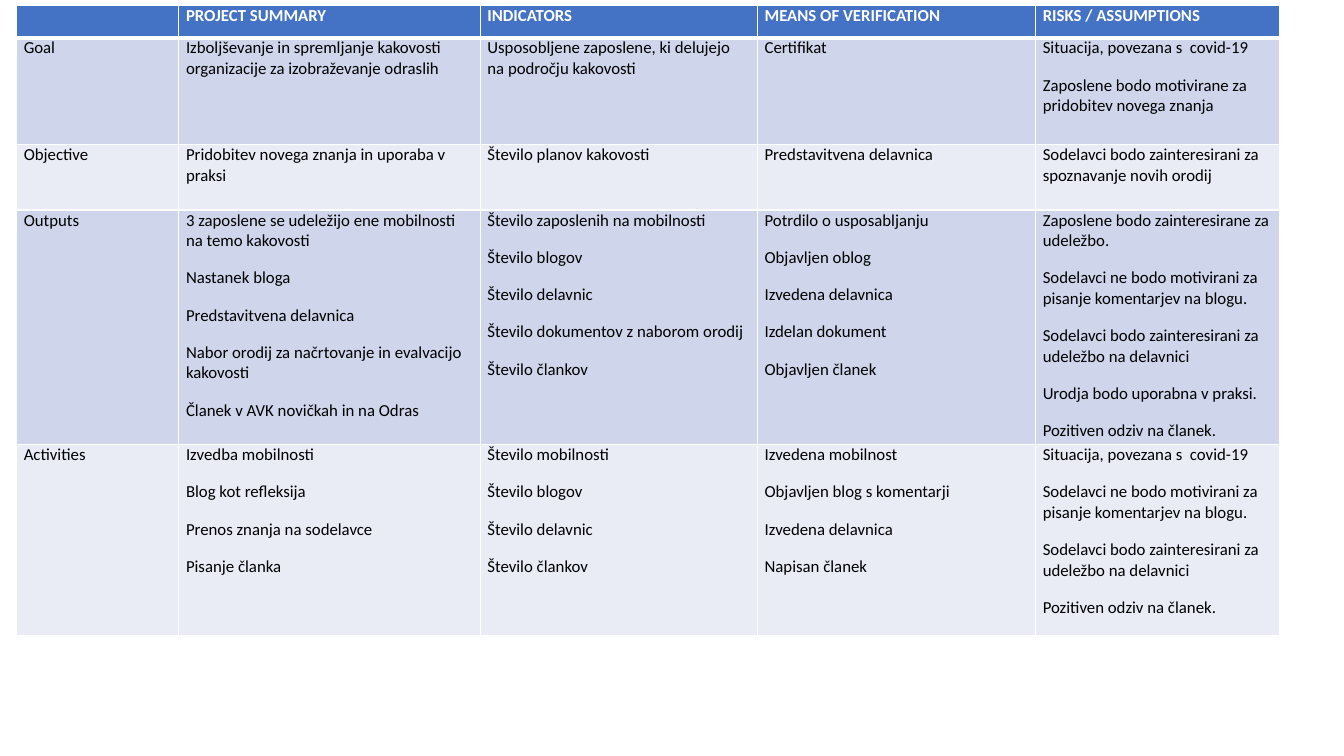
from lxml import etree
from pptx import Presentation
from pptx.dml.color import RGBColor
from pptx.enum.text import MSO_ANCHOR, PP_ALIGN
from pptx.oxml.ns import qn
from pptx.util import Pt

LEFT = PP_ALIGN.LEFT
TOP = MSO_ANCHOR.TOP
FONT = "Calibri"
BLANK_LAYOUT = 6

COLORS = {
    "header": "4472C4",
    "band_dark": "CFD5EA",
    "band_light": "E9EBF5",
    "border": "FFFFFF",
    "header_text": "FFFFFF",
    "body_text": "000000",
}

COLUMN_WIDTHS = [115.9, 215.3, 198, 198.7, 174.2]
ROW_HEIGHTS = [23.2, 76.3, 46.8, 167.6, 136.1]

# Each cell is a list of paragraphs
HEADERS = [
    [],
    ["PROJECT SUMMARY"],
    ["INDICATORS"],
    ["MEANS OF VERIFICATION"],
    ["RISKS / ASSUMPTIONS"],
]
GOAL = [
    ["Goal"],
    ["Izboljševanje in spremljanje kakovosti organizacije za izobraževanje odraslih"],
    ["Usposobljene zaposlene, ki delujejo na področju kakovosti"],
    ["Certifikat"],
    ["Situacija, povezana s  covid-19",
     "Zaposlene bodo motivirane za pridobitev novega znanja"],
]
OBJECTIVE = [
    ["Objective"],
    ["Pridobitev novega znanja in uporaba v praksi"],
    ["Število planov kakovosti"],
    ["Predstavitvena delavnica"],
    ["Sodelavci bodo zainteresirani za spoznavanje novih orodij"],
]
OUTPUTS = [
    ["Outputs"],
    ["3 zaposlene se udeležijo ene mobilnosti na temo kakovosti",
     "Nastanek bloga",
     "Predstavitvena delavnica",
     "Nabor orodij za načrtovanje in evalvacijo kakovosti",
     "Članek v AVK novičkah in na Odras"],
    ["Število zaposlenih na mobilnosti",
     "Število blogov",
     "Število delavnic",
     "Število dokumentov z naborom orodij",
     "Število člankov"],
    ["Potrdilo o usposabljanju",
     "Objavljen oblog",
     "Izvedena delavnica",
     "Izdelan dokument",
     "Objavljen članek"],
    ["Zaposlene bodo zainteresirane za udeležbo.",
     "Sodelavci ne bodo motivirani za pisanje komentarjev na blogu.",
     "Sodelavci bodo zainteresirani za udeležbo na delavnici",
     "Urodja bodo uporabna v praksi.",
     "Pozitiven odziv na članek."],
]
ACTIVITIES = [
    ["Activities"],
    ["Izvedba mobilnosti",
     "Blog kot refleksija",
     "Prenos znanja na sodelavce",
     "Pisanje članka"],
    ["Število mobilnosti",
     "Število blogov",
     "Število delavnic",
     "Število člankov"],
    ["Izvedena mobilnost",
     "Objavljen blog s komentarji",
     "Izvedena delavnica",
     "Napisan članek"],
    ["Situacija, povezana s  covid-19",
     "Sodelavci ne bodo motivirani za pisanje komentarjev na blogu.",
     "Sodelavci bodo zainteresirani za udeležbo na delavnici",
     "Pozitiven odziv na članek."],
]
ROWS = [HEADERS, GOAL, OBJECTIVE, OUTPUTS, ACTIVITIES]


def write_text(paragraph, text, size=12, color="body_text", bold=False, space=6):
    paragraph.alignment = LEFT
    paragraph.space_before = paragraph.space_after = Pt(space)
    run = paragraph.add_run()
    run.text = text
    run.font.name = FONT
    run.font.size = Pt(size)
    run.font.bold = bold
    run.font.color.rgb = RGBColor.from_string(COLORS[color])


def set_borders(cell, top=1, bottom=1):
    properties = cell._tc.get_or_add_tcPr()
    for side, width in (("L", 1), ("R", 1), ("T", top), ("B", bottom)):
        line = etree.SubElement(properties, qn(f"a:ln{side}"), w=str(Pt(width)))
        fill = etree.SubElement(line, qn("a:solidFill"))
        etree.SubElement(fill, qn("a:srgbClr"), val=COLORS["border"])


def fill_cell(cell, paragraphs, fill, top=1, bottom=1, **text_format):
    set_borders(cell, top, bottom)
    cell.fill.solid()
    cell.fill.fore_color.rgb = RGBColor.from_string(COLORS[fill])
    cell.margin_left = cell.margin_right = Pt(5.2)
    cell.margin_top = cell.margin_bottom = Pt(0)
    cell.vertical_anchor = TOP
    frame = cell.text_frame
    for index, text in enumerate(paragraphs):
        paragraph = frame.add_paragraph() if index else frame.paragraphs[0]
        write_text(paragraph, text, **text_format)


def add_project_table(slide, left, top):
    table = slide.shapes.add_table(
        len(ROWS), len(COLUMN_WIDTHS), Pt(left), Pt(top),
        Pt(sum(COLUMN_WIDTHS)), Pt(sum(ROW_HEIGHTS))).table
    for column, width in zip(table.columns, COLUMN_WIDTHS):
        column.width = Pt(width)
    for row, height in zip(table.rows, ROW_HEIGHTS):
        row.height = Pt(height)

    # Header row, then alternating bands
    for row_index, contents in enumerate(ROWS):
        if row_index == 0:
            style = {"fill": "header", "bottom": 3, "color": "header_text", "bold": True}
        else:
            style = {"fill": "band_dark" if row_index % 2 else "band_light",
                     "top": 3 if row_index == 1 else 1}
        for column_index, paragraphs in enumerate(contents):
            fill_cell(table.cell(row_index, column_index), paragraphs, **style)


def main():
    presentation = Presentation()
    presentation.slide_width = Pt(960)
    presentation.slide_height = Pt(540)
    slide = presentation.slides.add_slide(presentation.slide_layouts[BLANK_LAYOUT])
    add_project_table(slide, left=11.8, top=3.8)
    presentation.save("out.pptx")


if __name__ == "__main__":
    main()
